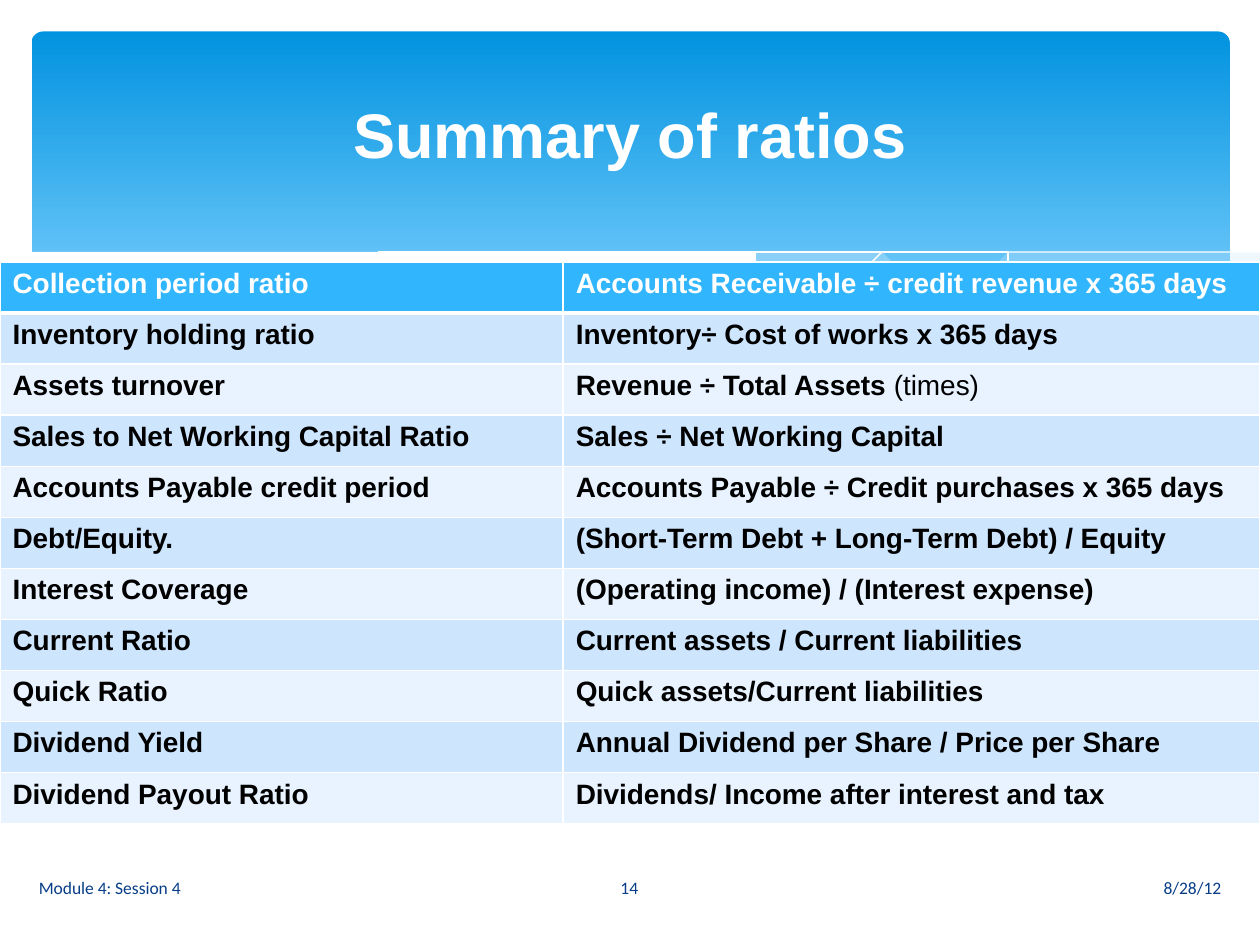
from lxml import etree
from pptx import Presentation, util as u
from pptx.dml.color import RGBColor
from pptx.enum import shapes as kinds, text as t
from pptx.oxml.ns import qn

# Content
TITLE = "Summary of ratios"
RATIOS = [
    ("Collection period ratio", "Accounts Receivable ÷ credit revenue x 365 days"),
    ("Inventory holding ratio", "Inventory÷ Cost of works x 365 days"),
    ("Assets turnover", "Revenue ÷ Total Assets ", "(times)"),
    ("Sales to Net Working Capital Ratio", "Sales ÷ Net Working Capital"),
    ("Accounts Payable credit period", "Accounts Payable ÷ Credit purchases x 365 days"),
    ("Debt/Equity.", "(Short-Term Debt + Long-Term Debt) / Equity"),
    ("Interest Coverage", "(Operating income) / (Interest expense)"),
    ("Current Ratio", "Current assets / Current liabilities"),
    ("Quick Ratio", "Quick assets/Current liabilities"),
    ("Dividend Yield", "Annual Dividend per Share / Price per Share"),
    ("Dividend Payout Ratio", "Dividends/ Income after interest and tax"),
]
FOOTER = [  # words, left, width, alignment
    ("Module 4: Session 4", 0.21, 4.14, t.PP_ALIGN.LEFT),
    ("14", 4.36, 1.27, t.PP_ALIGN.CENTER),
    ("8/28/12", 5.65, 4.14, t.PP_ALIGN.RIGHT),
]

# Waves: each is a list of smooth edges, then fill, opacity in percent
WAVES = [
    ([[(9.76, 2), (9.35, 2.07), (8.91, 2.16), (8.32, 2.3), (7.79, 2.42), (7.29, 2.53), (6.61, 2.65)],
      [(6.61, 2.65), (7.05, 2.71), (7.57, 2.76), (8.14, 2.78), (8.63, 2.75), (9.13, 2.67), (9.76, 2.47)]],
     "C6E7FC", 29),
    ([[(8.93, 2.73), (8.37, 2.65), (7.75, 2.54), (7.06, 2.4), (6.29, 2.22), (5.69, 2.08), (5.14, 1.98),
       (4.65, 1.91), (4.2, 1.87), (3.8, 1.85), (3.44, 1.86), (2.86, 1.91)],
      [(2.86, 1.91), (3.42, 1.99), (4.04, 2.11), (4.49, 2.22), (5.3, 2.4), (6.01, 2.55), (6.65, 2.66),
       (7.22, 2.74), (7.73, 2.77), (8.18, 2.78), (8.57, 2.77), (8.93, 2.73)]],
     "C6E7FC", 40),
    ([[(3.09, 1.95), (3.44, 1.9), (3.87, 1.87), (4.33, 1.87), (4.89, 1.9), (5.56, 1.97), (6.36, 2.08),
       (7.27, 2.26), (8.31, 2.51), (9.07, 2.72)]], None, 100),
    ([[(6.13, 2.57), (6.72, 2.41), (7.48, 2.23), (8.06, 2.1), (8.66, 1.99), (9.24, 1.9), (9.75, 1.85)]],
     None, 100),
    ([[(9.77, 2.46), (9.4, 2.59), (8.99, 2.69), (8.5, 2.75), (8.09, 2.77), (7.61, 2.75), (7.08, 2.7),
       (6.48, 2.62), (5.79, 2.5), (5.03, 2.33), (4.47, 2.2), (3.91, 2.07), (3.4, 1.97), (2.92, 1.9),
       (2.5, 1.86), (2.11, 1.84), (1.77, 1.84), (1.46, 1.85), (1.06, 1.89), (0.76, 1.95), (0.46, 2.03),
       (0.23, 2.13)],
      [(0.23, 3.29), (9.77, 3.29)]], "FFFFFF", 100),
]

COLUMNS = (4.47, 5.53)
TABLE_TOP, TABLE_HEIGHT = 2.08, 4.46
HEADER_FILL, BAND_FILLS = "31B6FD", ("CEE5FE", "E8F3FF")


def color(value):
    return RGBColor.from_string(value)


def box(*inches):
    return [u.Inches(n) for n in inches]


def write(paragraph, words, size, face, ink, bold=False):
    run = paragraph.add_run()
    run.text = words
    for name, value in dict(size=u.Pt(size), name=face, bold=bold).items():
        setattr(run.font, name, value)
    run.font.color.rgb = color(ink)


def smooth(knots, steps=4):
    """Catmull-Rom curve through the knots."""
    padded = [knots[0], *knots, knots[-1]]
    curve = [knots[0]]
    for a, b, c, d in zip(padded, padded[1:], padded[2:], padded[3:]):
        for s in (n / steps for n in range(1, steps + 1)):
            curve.append(tuple(
                q + s * (r - p) / 2 + s * s * (2 * p - 5 * q + 4 * r - e) / 2
                + s ** 3 * (3 * q - p - 3 * r + e) / 2
                for p, q, r, e in zip(a, b, c, d)))
    return curve


def add_wave(slide, edges, fill, opacity):
    points = [point for edge in edges for point in smooth(edge)]
    builder = slide.shapes.build_freeform(*points[0], scale=u.Inches(1))
    builder.add_line_segments(points[1:], close=fill is not None)
    wave = builder.convert_to_shape()
    wave.shadow.inherit = False
    if fill is None:
        wave.fill.background()
        wave.line.color.rgb = color("FFFFFF")
        wave.line.width = u.Pt(0)
        return
    wave.line.fill.background()
    wave.fill.solid()
    wave.fill.fore_color.rgb = color(fill)
    if opacity < 100:
        tint = wave.fill._xPr.find(".//" + qn("a:srgbClr"))
        etree.SubElement(tint, qn("a:alpha"), val=str(opacity * 1000))


def add_borders(cell, top, bottom):
    props = cell._tc.get_or_add_tcPr()
    for place, (side, width) in enumerate(dict(L=1, R=1, T=top, B=bottom).items()):
        line = etree.Element(qn("a:ln" + side), w=str(u.Pt(width)))
        paint = etree.SubElement(line, qn("a:solidFill"))
        etree.SubElement(paint, qn("a:srgbClr"), val="FFFFFF")
        props.insert(place, line)


def add_ratios(slide):
    frame = slide.shapes.add_table(len(RATIOS), len(COLUMNS),
                                   *box(0, TABLE_TOP, sum(COLUMNS), TABLE_HEIGHT))
    table = frame.table
    for column, width in zip(table.columns, COLUMNS):
        column.width = u.Inches(width)
    for r, (ratio, formula, *unit) in enumerate(RATIOS):
        table.rows[r].height = u.Inches(TABLE_HEIGHT / len(RATIOS))
        header = r == 0
        for c, words in enumerate((ratio, formula)):
            cell = table.cell(r, c)
            cell.fill.solid()
            cell.fill.fore_color.rgb = color(HEADER_FILL if header else BAND_FILLS[(r - 1) % 2])
            add_borders(cell, top=3 if r == 1 else 1, bottom=3 if header else 1)
            line = cell.text_frame.paragraphs[0]
            ink = "FFFFFF" if header else "000000"
            write(line, words, 16, "Arial", ink, True)
            if c == 1 and unit:
                write(line, unit[0], 16, "Arial", ink)


def main():
    deck = Presentation()
    deck.slide_width, deck.slide_height = box(10, 7.5)
    slide = deck.slides.add_slide(deck.slide_layouts[5])

    # Banner with waves
    banner = slide.shapes.add_shape(kinds.MSO_SHAPE.ROUNDED_RECTANGLE, *box(0.25, 0.25, 9.51, 2.7))
    banner.adjustments[0] = 0.034
    banner.shadow.inherit = False
    banner.line.fill.background()
    banner.fill.gradient()
    banner.fill.gradient_angle = 270
    for stop, (position, shade) in zip(banner.fill.gradient_stops, [(0, "0293E0"), (0.9, "83D3FE")]):
        stop.position = position
        stop.color.rgb = color(shade)
    for wave in WAVES:
        add_wave(slide, *wave)

    add_ratios(slide)

    # Footer
    for words, left, width, align in FOOTER:
        frame = slide.shapes.add_textbox(*box(left, 6.84, width, 0.4)).text_frame
        frame.word_wrap = True
        frame.vertical_anchor = t.MSO_ANCHOR.MIDDLE
        frame.paragraphs[0].alignment = align
        write(frame.paragraphs[0], words, 10, "Calibri", "073E87")

    # Title, brought in front of the banner
    title = slide.shapes.title
    for name, value in zip(("left", "top", "width", "height"), box(0.5, 0.37, 9, 1.37)):
        setattr(title, name, value)
    title.text_frame.vertical_anchor = t.MSO_ANCHOR.MIDDLE
    title.text_frame.paragraphs[0].alignment = t.PP_ALIGN.CENTER
    write(title.text_frame.paragraphs[0], TITLE, 36, "Arial", "FFFFFF", True)
    slide.shapes._spTree.append(title._element)

    deck.save("out.pptx")


if __name__ == "__main__":
    main()
